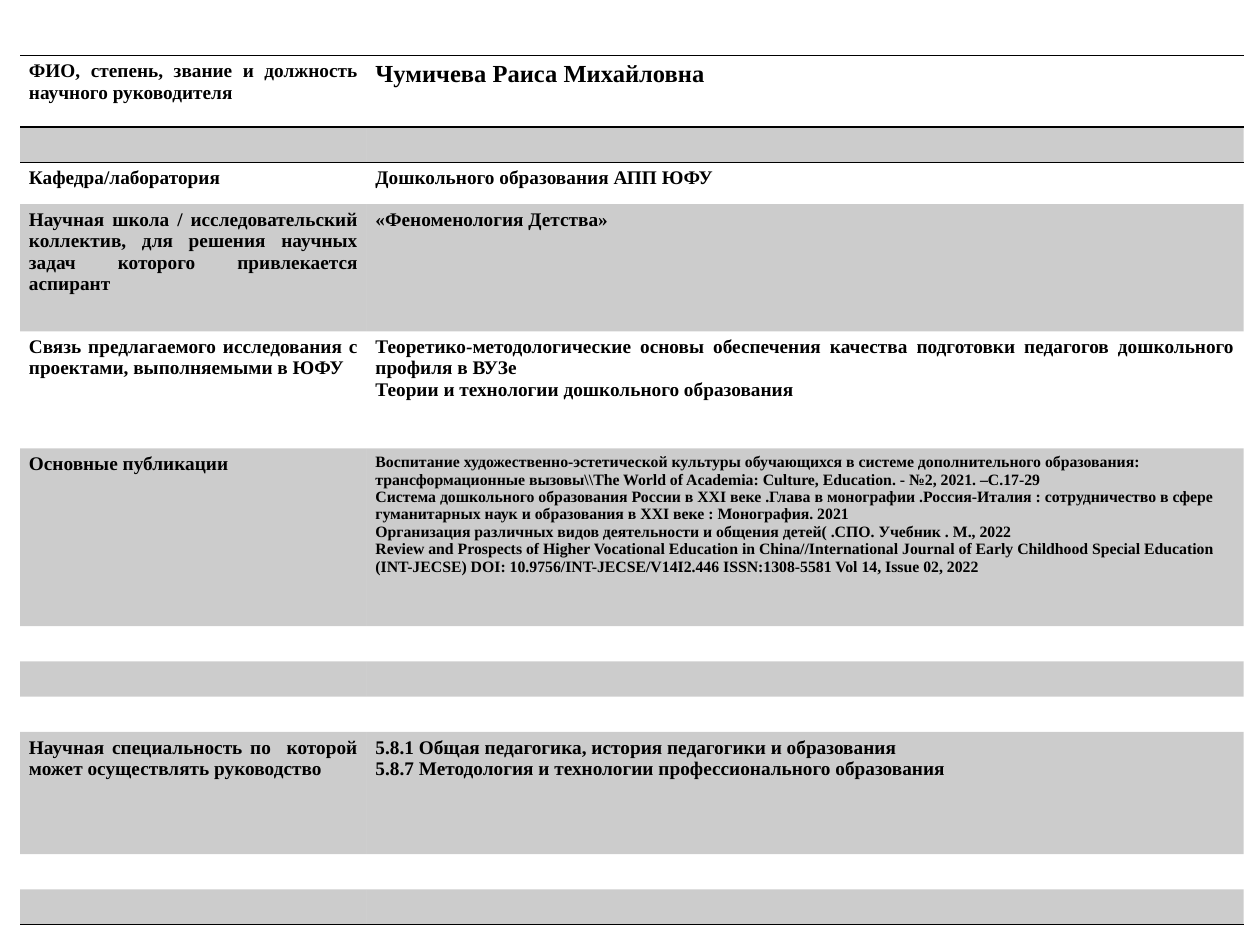
from dataclasses import dataclass

from lxml import etree
from pptx import Presentation
from pptx import util as u
from pptx.dml.color import RGBColor
from pptx.enum import text
from pptx.oxml import ns

FONT = "Times New Roman"
BLACK = "000000"
SHADE_OPACITY = 20
EMPTY_HEIGHT = 0.28
NO_STYLE = "{2D5ABB26-0587-4C30-8999-92F81FD0307C}"


@dataclass(frozen=True)
class Entry:
    """One table row: a label, its value paragraphs and their format."""
    height: float = EMPTY_HEIGHT
    label: str = ""
    values: tuple[str, ...] = ("",)
    size: int = 11
    justified: bool = True


ENTRIES = [
    Entry(0.57, "ФИО, степень, звание и должность научного руководителя",
          ("Чумичева Раиса Михайловна",), size=14),
    Entry(),
    Entry(0.33, "Кафедра/лаборатория", ("Дошкольного образования АПП ЮФУ",)),
    Entry(1.01, "Научная школа / исследовательский коллектив, для решения "
          "научных задач которого привлекается аспирант",
          ("«Феноменология Детства»",)),
    Entry(0.93, "Связь предлагаемого исследования с проектами, выполняемыми в ЮФУ",
          ("Теоретико-методологические основы обеспечения качества подготовки "
           "педагогов дошкольного профиля в ВУЗе",
           "Теории и технологии дошкольного образования")),
    Entry(1.41, "Основные публикации",
          ("Воспитание художественно-эстетической культуры обучающихся в системе "
           "дополнительного образования: трансформационные вызовы\\\\The World of "
           "Academia: Culture, Education. - №2, 2021. –С.17-29",
           "Система дошкольного образования России в ХХI веке .Глава в монографии "
           ".Россия-Италия : сотрудничество в сфере гуманитарных наук и образования "
           "в XXI веке : Монография. 2021",
           "Организация различных видов деятельности и общения детей( .СПО. "
           "Учебник . М., 2022",
           "Review and Prospects of Higher Vocational Education in "
           "China//International Journal of Early Childhood Special Education "
           "(INT-JECSE) DOI: 10.9756/INT-JECSE/V14I2.446 ISSN:1308-5581 Vol 14, "
           "Issue 02, 2022"),
          size=9, justified=False),
    Entry(),
    Entry(),
    Entry(),
    Entry(0.97, "Научная специальность по  которой может осуществлять руководство",
          ("5.8.1 Общая педагогика, история педагогики и образования",
           "5.8.7 Методология и технологии профессионального образования"),
          justified=False),
    Entry(),
    Entry(),
]
COLUMN_WIDTHS = (2.75, 6.96)
MERGED_ROW = 6
RULES = {0: ("lnT", "lnB"), 1: ("lnT",), len(ENTRIES) - 1: ("lnB",)}


def color(value: str) -> RGBColor:
    return RGBColor.from_string(value)


def write(cell, paragraphs: tuple[str, ...], *, size: int, justified: bool) -> None:
    """Fill a cell with bold paragraphs; an empty one only gets its size."""
    cell.margin_left = cell.margin_right = u.Inches(0.07)
    cell.margin_top = cell.margin_bottom = u.Inches(0.04)
    frame = cell.text_frame
    for index, content in enumerate(paragraphs):
        para = frame.add_paragraph() if index else frame.paragraphs[0]
        if not content:
            etree.SubElement(para._p, ns.qn("a:endParaRPr"), sz=str(size * 100))
            continue
        para.alignment = text.PP_ALIGN.JUSTIFY if justified else text.PP_ALIGN.LEFT
        span = para.add_run()
        span.text = content
        span.font.name = FONT
        span.font.size = u.Pt(size)
        span.font.bold = True
        span.font.color.rgb = color(BLACK)


def shade(cell) -> None:
    cell.fill.solid()
    cell.fill.fore_color.rgb = color(BLACK)
    fill = cell._tc.tcPr.find(".//" + ns.qn("a:srgbClr"))
    etree.SubElement(fill, ns.qn("a:alpha"), val=str(SHADE_OPACITY * 1000))


def rule(cell, sides: tuple[str, ...]) -> None:
    """Draw one-point borders; they precede the fill in the cell properties."""
    properties = cell._tc.get_or_add_tcPr()
    for index, side in enumerate(sides):
        line = etree.Element(ns.qn("a:" + side), w=str(u.Pt(1)))
        solid = etree.SubElement(line, ns.qn("a:solidFill"))
        etree.SubElement(solid, ns.qn("a:srgbClr"), val=BLACK)
        properties.insert(index, line)


def add_profile_table(page, entries: list[Entry]) -> None:
    frame = page.shapes.add_table(
        len(entries), len(COLUMN_WIDTHS), u.Inches(0.16), u.Inches(0.44),
        u.Inches(sum(COLUMN_WIDTHS)), u.Inches(sum(e.height for e in entries)))
    table = frame.table
    table.first_row = table.horz_banding = False
    table._tbl.tblPr.find(ns.qn("a:tableStyleId")).text = NO_STYLE

    for column, width in zip(table.columns, COLUMN_WIDTHS):
        column.width = u.Inches(width)

    for index, entry in enumerate(entries):
        table.rows[index].height = u.Inches(entry.height)
        label, value = table.cell(index, 0), table.cell(index, 1)
        write(label, (entry.label,), size=11, justified=True)
        write(value, entry.values, size=entry.size, justified=entry.justified)
        for cell in (label, value):
            if index % 2:
                shade(cell)
            else:
                cell.fill.background()
            rule(cell, RULES.get(index, ()))

    table.cell(MERGED_ROW, 0).merge(table.cell(MERGED_ROW, 1))


def main() -> None:
    deck = Presentation()
    deck.slide_width, deck.slide_height = u.Inches(10), u.Inches(7.5)
    page = deck.slides.add_slide(deck.slide_layouts[6])
    add_profile_table(page, ENTRIES)
    deck.save("out.pptx")


if __name__ == "__main__":
    main()
